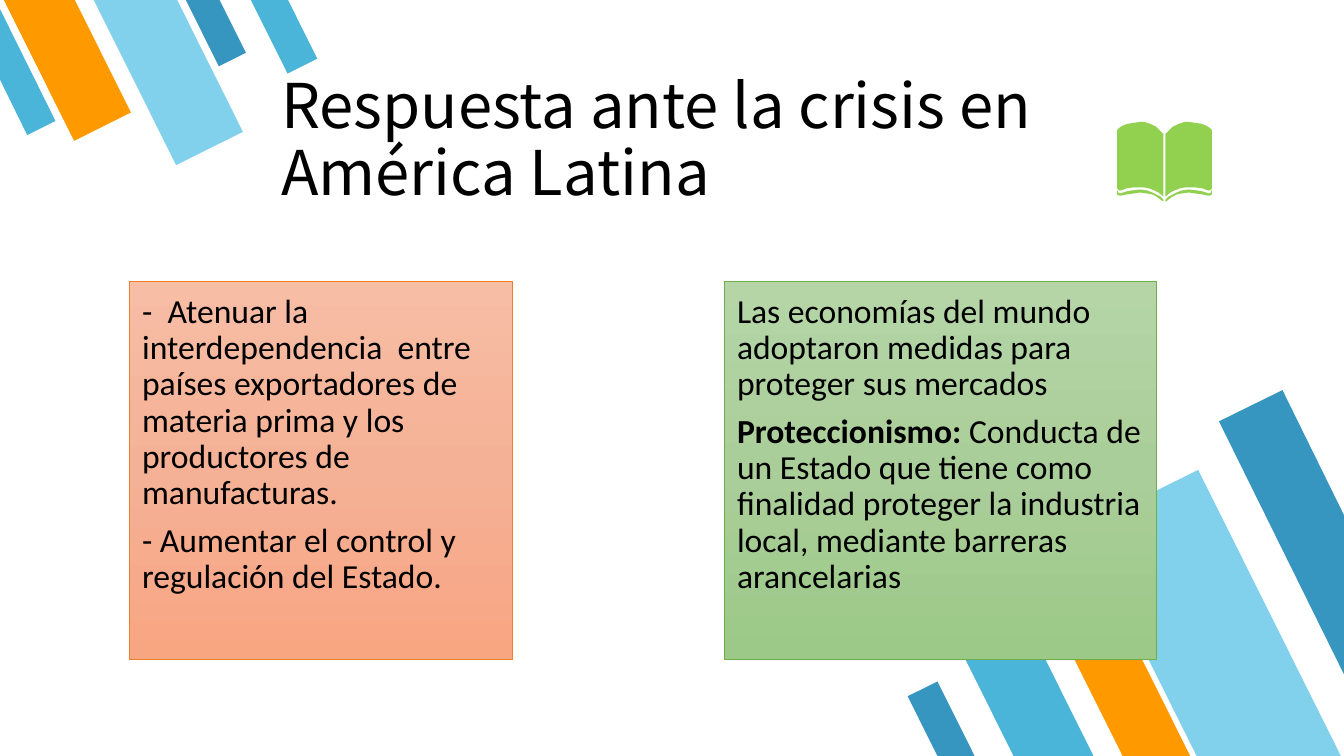
import copy

import pptx
import pptx.dml.color
import pptx.enum.shapes
import pptx.enum.text
import pptx.oxml.ns
import pptx.util

PX = 9144  # EMU per px, 100 px to the inch
COLORS = {
    "deep": "3796BF", "blue": "4BB5D9", "sky": "81D1EC", "orange": "FF9900",
    "book": "92D050", "text": "000000",
    "salmon_line": "ED7D31", "green_line": "70AD47",
}
SALMON = ("F7BDA5", "F5B196", "F8A582")
GREEN = ("B5D5A7", "AACE9A", "9CC987")
PADDING = 13
BOOK_MIRROR = 2310  # twice the x of the book's spine

# colour, left, top, width, height before rotation
BOTTOM_BARS = [
    ("blue", 978, 599, 71, 176),
    ("sky", 1138, 478, 128, 318),
    ("orange", 1091, 624, 60, 148),
    ("deep", 917, 679, 33, 83),
]
TOP_BARS = [
    ("deep", 199, -11, 30, 74),
    ("orange", 35, -24, 63, 158),
    ("sky", 130, -26, 74, 183),
    ("blue", 265, -13, 33, 83),
]
RIGHT_EDGE_BAR = [(1272, 387), (1209, 418), (1333, 669), (1333, 511)]
LEFT_EDGE_BAR = [(27, 134), (55, 120), (0, 9), (0, 79)]

LEFT_PAGE = [
    (1131, 121), (1124, 122), (1118, 123), (1113, 125), (1110, 127),
    (1108, 129), (1108, 187), (1110, 189), (1112, 189), (1117, 187),
    (1124, 186), (1135, 186), (1140, 187), (1145, 189), (1149, 191),
    (1154, 195), (1154, 133), (1152, 131), (1147, 126), (1141, 123),
    (1135, 121),
]
LEFT_PAGE_EDGE = [
    (1108, 188), (1108, 193), (1110, 194), (1112, 194), (1117, 193),
    (1124, 192), (1131, 191), (1138, 192), (1143, 193), (1147, 195),
    (1151, 198), (1154, 200), (1154, 198), (1151, 195), (1147, 193),
    (1143, 191), (1138, 189), (1131, 188), (1122, 189), (1117, 190),
    (1111, 192), (1109, 191),
]


def rgb(value):
    return pptx.dml.color.RGBColor.from_string(value)


def paint(s, color):
    s.shadow.inherit = False
    s.fill.solid()
    s.fill.fore_color.rgb = rgb(COLORS[color])
    s.line.fill.background()


def add_bar(slide, color, left, top, width, height, rotation):
    s = slide.shapes.add_shape(
        pptx.enum.shapes.MSO_SHAPE.FLOWCHART_MANUAL_INPUT,
        left * PX, top * PX, width * PX, height * PX)
    s.rotation = rotation
    s._element.spPr.xfrm.set("flipH", "1")
    paint(s, color)


def add_outline(slide, points, color):
    builder = slide.shapes.build_freeform(*points[0], scale=PX)
    builder.add_line_segments(points[1:], close=True)
    paint(builder.convert_to_shape(), color)


def add_book(slide):
    for points in (LEFT_PAGE_EDGE, LEFT_PAGE):
        add_outline(slide, points, "book")
        add_outline(slide, [(BOOK_MIRROR - x, y) for x, y in points], "book")


def write(tf, paragraphs, size, font, anchor="TOP", space_before=0):
    """Fill a text frame; each paragraph is a list of (text, bold) runs."""
    tf.word_wrap = True
    tf.auto_size = pptx.enum.text.MSO_AUTO_SIZE.NONE
    tf.vertical_anchor = pptx.enum.text.MSO_ANCHOR[anchor]
    tf.margin_left = tf.margin_right = PADDING * PX
    tf.margin_top = tf.margin_bottom = PADDING * PX
    for i, runs in enumerate(paragraphs):
        p = tf.add_paragraph() if i else tf.paragraphs[0]
        p.alignment = pptx.enum.text.PP_ALIGN.LEFT
        p.line_spacing = 0.9
        p.space_before = pptx.util.Pt(space_before)
        for text, bold in runs:
            r = p.add_run()
            r.text = text
            r.font.size = pptx.util.Pt(size)
            r.font.name = font
            r.font.bold = bold
            r.font.color.rgb = rgb(COLORS["text"])


def fill_gradient(s, colors):
    """Three evenly spaced stops running from top to bottom."""
    s.fill.gradient()
    s.fill.gradient_angle = 270
    stops = next(s._element.spPr.iter(pptx.oxml.ns.qn("a:gsLst")))
    stops.insert(1, copy.deepcopy(stops[0]))
    for i, (stop, color) in enumerate(zip(s.fill.gradient_stops, colors)):
        stop.position = i / 2
        stop.color.rgb = rgb(color)


def add_card(slide, left, width, gradient, line, paragraphs):
    s = slide.shapes.add_shape(
        pptx.enum.shapes.MSO_SHAPE.RECTANGLE,
        left * PX, 279 * PX, width * PX, 375 * PX)
    s.shadow.inherit = False
    fill_gradient(s, gradient)
    s.line.color.rgb = rgb(COLORS[line])
    s.line.width = pptx.util.Pt(0.5)
    write(s.text_frame, paragraphs, size=24, font="Calibri", space_before=8)


def set_title(slide, text):
    s = slide.shapes.title
    s.left, s.top, s.width, s.height = (v * PX for v in (266, 121, 840, 99))
    write(s.text_frame, [[(text, False)]], size=44, font="Noto Sans CJK KR",
          anchor="BOTTOM")


def main():
    prs = pptx.Presentation()
    prs.slide_width, prs.slide_height = 1333 * PX, 750 * PX
    slide = prs.slides.add_slide(prs.slide_layouts[5])

    for bars, rotation in ((BOTTOM_BARS, 153.5), (TOP_BARS, 333.5)):
        for bar in bars:
            add_bar(slide, *bar, rotation)
    add_outline(slide, RIGHT_EDGE_BAR, "deep")
    add_outline(slide, LEFT_EDGE_BAR, "blue")

    set_title(slide, "Respuesta ante la crisis en América Latina")
    add_card(slide, 128, 380, SALMON, "salmon_line", [
        [("-  Atenuar la interdependencia  entre países exportadores de "
          "materia prima y los productores de manufacturas.", False)],
        [("- Aumentar el control y regulación del Estado.", False)],
    ])
    add_card(slide, 718, 429, GREEN, "green_line", [
        [("Las economías del mundo adoptaron medidas para proteger sus "
          "mercados", False)],
        [("Proteccionismo: ", True),
         ("Conducta de un Estado que tiene como finalidad proteger la "
          "industria local, mediante barreras arancelarias", False)],
    ])
    add_book(slide)
    prs.save("out.pptx")


if __name__ == "__main__":
    main()
